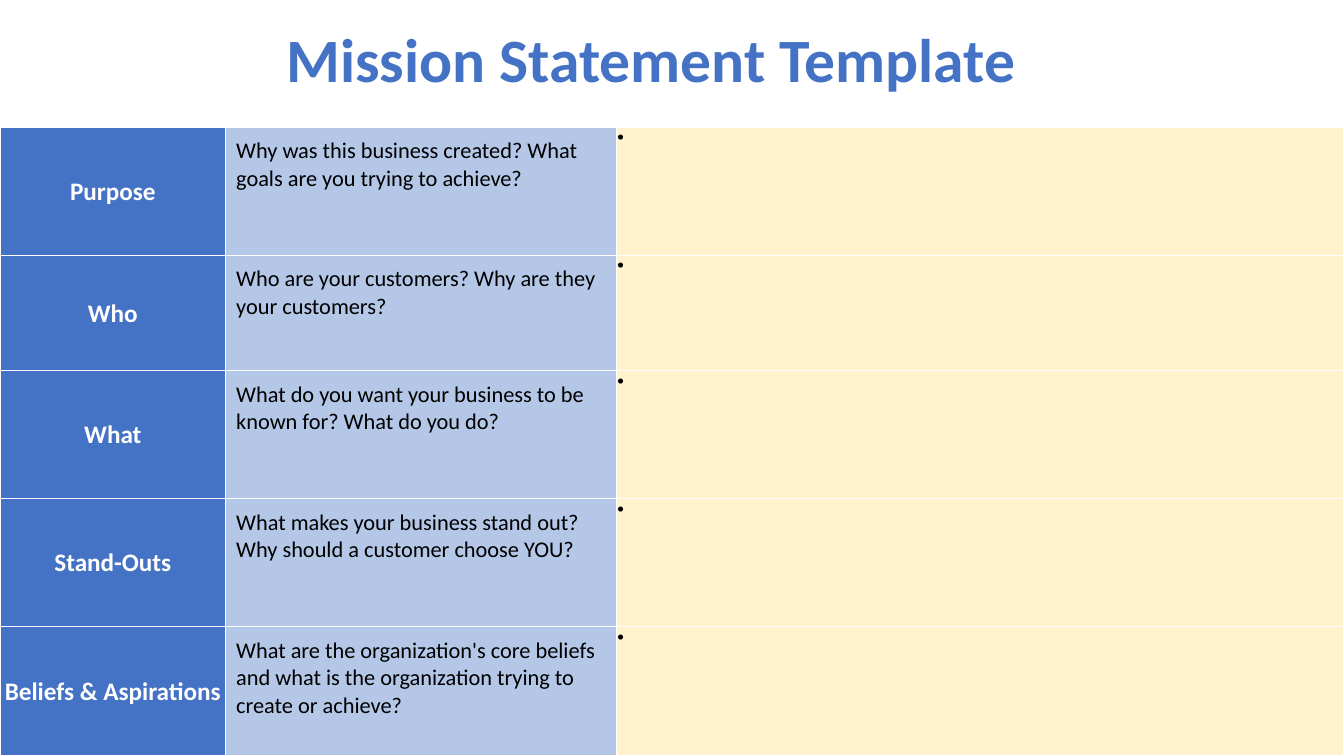
import pptx
import pptx.dml.color
import pptx.enum.text
import pptx.oxml
import pptx.oxml.ns
import pptx.util

TITLE = "Mission Statement Template"
ROWS = [
    ("Purpose", "Why was this business created? What goals are you trying to achieve?"),
    ("Who", "Who are your customers? Why are they your customers?"),
    ("What", "What do you want your business to be known for? What do you do?"),
    ("Stand-Outs", "What makes your business stand out? Why should a customer choose YOU?"),
    ("Beliefs & Aspirations", "What are the organization's core beliefs and what is the "
                              "organization trying to create or achieve?"),
]
FONT = "Calibri"
BLUE, PALE_BLUE, CREAM = "4472C4", "B4C7E7", "FFF2CC"
WHITE, BLACK = "FFFFFF", "000000"

SLIDE_W, SLIDE_H = 1280, 720
TITLE_BOX = (263, 31, 986, 58)
TABLE_TOP = 121
COL_WIDTHS = [215, 372, 693]
ROW_HEIGHTS = [122, 110, 122, 122, 123]

ALIGN = pptx.enum.text.PP_ALIGN
ANCHOR = pptx.enum.text.MSO_ANCHOR


def px(n):
    return pptx.util.Emu(n * 9525)


def rgb(color):
    return pptx.dml.color.RGBColor.from_string(color)


def set_font(p, size, color, bold):
    p.font.name = FONT
    p.font.size = pptx.util.Pt(size)
    p.font.bold = bold
    p.font.color.rgb = rgb(color)


def add_bullet(p):
    p._p.get_or_add_pPr().append(pptx.oxml.parse_xml(
        f'<a:buChar {pptx.oxml.ns.nsdecls("a")} char="•"/>'))


def add_borders(cell):
    """Put a thin white line on all four sides, ahead of the cell's fill."""
    tc_pr = cell._tc.get_or_add_tcPr()
    for i, side in enumerate("LRTB"):
        tc_pr.insert(i, pptx.oxml.parse_xml(
            f'<a:ln{side} {pptx.oxml.ns.nsdecls("a")} w="12700"><a:solidFill>'
            f'<a:srgbClr val="{WHITE}"/></a:solidFill></a:ln{side}>'))


def fill_cell(cell, text, fill, color, size, bold, align, anchor, margins, bullet):
    cell.fill.solid()
    cell.fill.fore_color.rgb = rgb(fill)
    add_borders(cell)
    cell.vertical_anchor = anchor
    (cell.margin_left, cell.margin_top,
     cell.margin_right, cell.margin_bottom) = map(px, margins)
    cell.text = text
    p = cell.text_frame.paragraphs[0]
    p.alignment = align
    if bullet:
        add_bullet(p)
    set_font(p, size, color, bold)


# fill, text colour, size, bold, alignment, anchor, margins, bullet
COLUMN_STYLES = [
    (BLUE, WHITE, 18, True, ALIGN.CENTER, ANCHOR.MIDDLE, (1, 1, 1, 0), False),
    (PALE_BLUE, BLACK, 16, False, ALIGN.LEFT, ANCHOR.TOP, (10, 10, 10, 10), False),
    (CREAM, BLACK, 14, False, ALIGN.LEFT, ANCHOR.TOP, (1, 1, 1, 0), True),
]


def main():
    prs = pptx.Presentation()
    prs.slide_width, prs.slide_height = px(SLIDE_W), px(SLIDE_H)
    s = prs.slides.add_slide(prs.slide_layouts[5])

    title = s.shapes.title
    title.left, title.top, title.width, title.height = map(px, TITLE_BOX)
    tf = title.text_frame
    tf.text = TITLE
    tf.auto_size = pptx.enum.text.MSO_AUTO_SIZE.NONE
    tf.vertical_anchor = ANCHOR.MIDDLE
    p = tf.paragraphs[0]
    p.alignment = ALIGN.LEFT
    p.line_spacing = 0.9
    set_font(p, 44, BLUE, True)

    table = s.shapes.add_table(len(ROWS), len(COL_WIDTHS), 0, px(TABLE_TOP),
                               px(sum(COL_WIDTHS)), px(sum(ROW_HEIGHTS))).table
    for col, width in zip(table.columns, COL_WIDTHS):
        col.width = px(width)
    for row, height, texts in zip(table.rows, ROW_HEIGHTS, ROWS):
        row.height = px(height)
        # A single space keeps the bullet of the answer cell showing.
        for cell, text, style in zip(row.cells, (*texts, " "), COLUMN_STYLES):
            fill_cell(cell, text, *style)

    prs.save("out.pptx")


if __name__ == "__main__":
    main()
